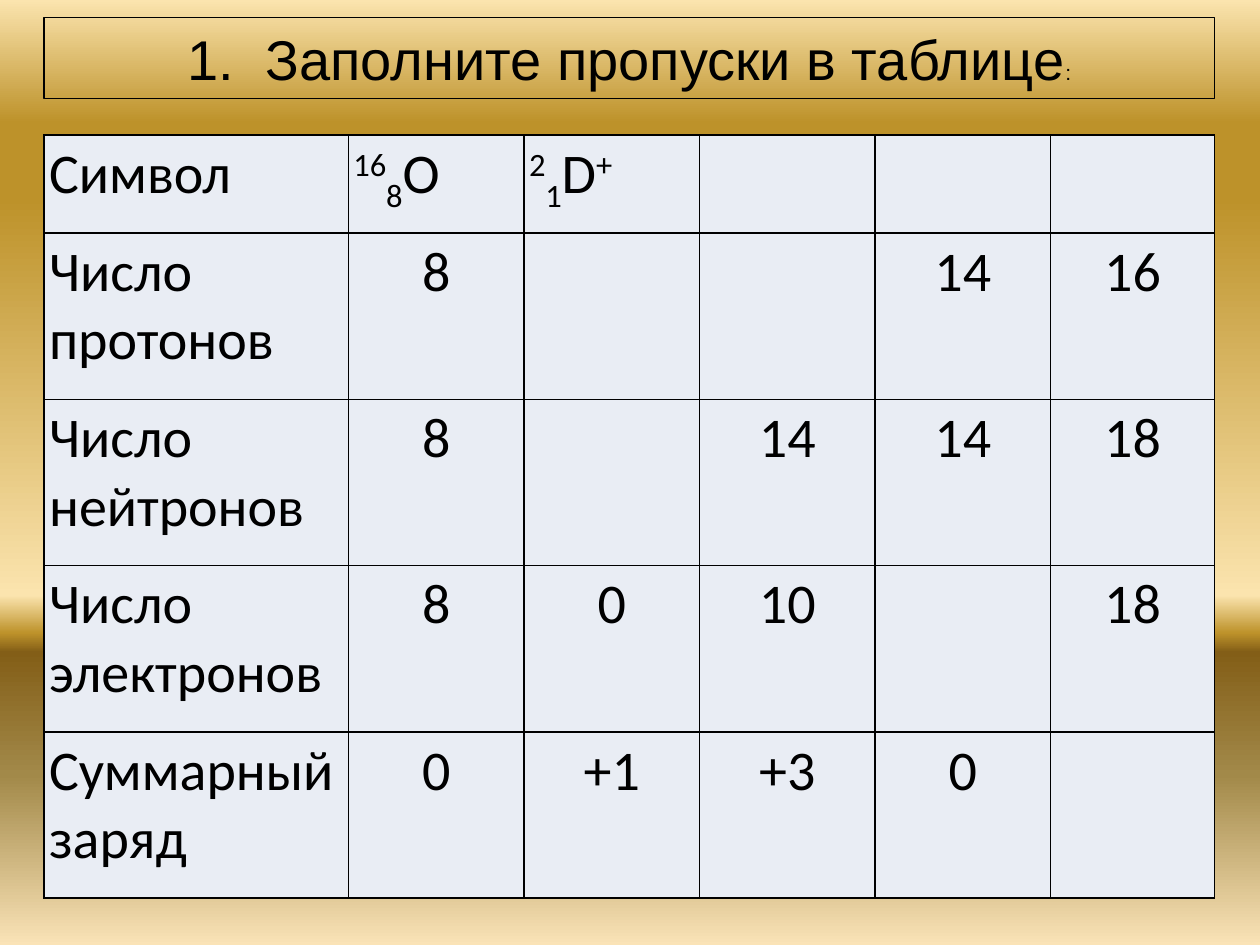
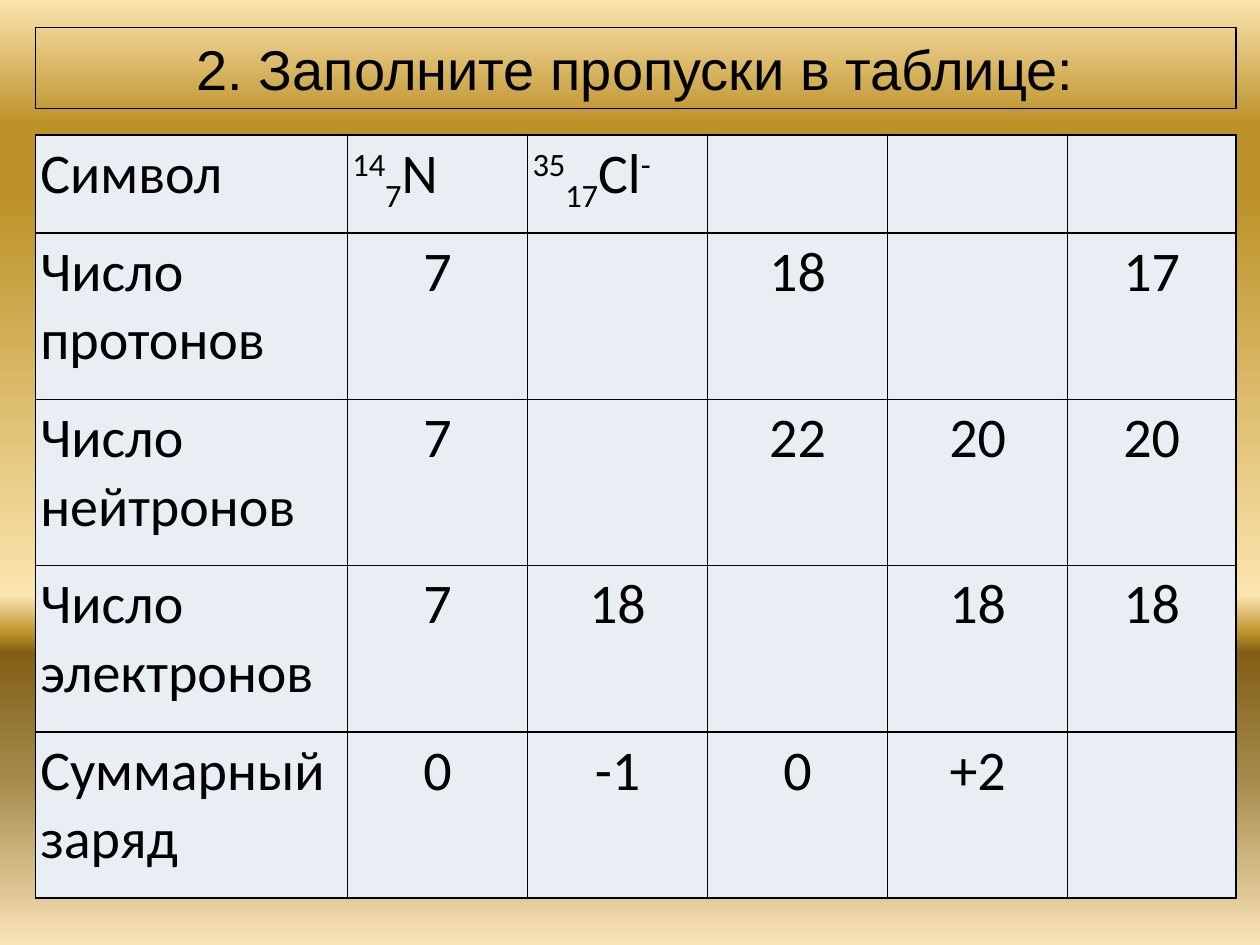
from dataclasses import dataclass
from itertools import product

from lxml.etree import SubElement
from pptx import Presentation
from pptx.dml.color import RGBColor
from pptx.enum.text import MSO_ANCHOR, MSO_AUTO_SIZE, PP_ALIGN
from pptx.oxml.ns import qn
from pptx.util import Emu, Inches, Pt

WIDTH, HEIGHT = Inches(10), Inches(7.5)
COLORS = {
    "ink": "000000",
    "cell": "E9EDF4",
    "cream": "FBE4AE",
    "gold": "BD922A",
    "brown": "835E17",
    "khaki": "A28949",
    "sand": "FAE3B7",
}
BACKDROP = [(0, "cream"), (13, "gold"), (21, "gold"), (63, "cream"),
            (67, "gold"), (69, "brown"), (82, "khaki"), (100, "sand")]

# Column shares are percent of the table width; the others are percent of the slide.
COLUMN_SHARES = [26, 15, 15, 15, 15, 14]
ROW_SHARES = [10.4] + [17.6] * 4
TABLE_TOP = 14.27
TITLE_HEIGHT = 8.53
ROW_LABELS = ["Символ", "Число протонов", "Число нейтронов",
              "Число электронов", "Суммарный заряд"]
CELL_FORMAT = {name: Inches(0.04) for name in
               ("margin_left", "margin_right", "margin_top", "margin_bottom")}
TITLE_FORMAT = {
    "word_wrap": True,
    "auto_size": MSO_AUTO_SIZE.NONE,
    "vertical_anchor": MSO_ANCHOR.MIDDLE,
}


@dataclass(frozen=True)
class Piece:
    text: str
    size: float = 32
    baseline: int = 0
    spacing: float = 0


@dataclass(frozen=True)
class Nuclide:
    mass: str
    protons: str
    symbol: str
    charge: str = ""

    def pieces(self) -> list[Piece]:
        parts = [Piece(self.mass, baseline=30), Piece(self.protons, baseline=-25),
                 Piece(self.symbol), Piece(self.charge, baseline=30)]
        return [part for part in parts if part.text]


@dataclass(frozen=True)
class Exercise:
    title: list[Piece]
    left: float
    width: float
    title_top: float
    nuclides: list[Nuclide]
    values: list[list[str]]


EXERCISES = [
    Exercise(
        [Piece("1."), Piece(" ", spacing=8.9),
         Piece("Заполните пропуски в таблице"), Piece(":", size=12)],
        3.5, 92.9, 1.87,
        [Nuclide("16", "8", "O"), Nuclide("2", "1", "D", "+")],
        [["8", "", "", "14", "16"],
         ["8", "", "14", "14", "18"],
         ["8", "0", "10", "", "18"],
         ["0", "+1", "+3", "0", ""]],
    ),
    Exercise(
        [Piece("2. Заполните пропуски в таблице:")],
        2.8, 95.3, 2.93,
        [Nuclide("14", "7", "N"), Nuclide("35", "17", "Cl", "-")],
        [["7", "", "18", "", "17"],
         ["7", "", "22", "20", "20"],
         ["7", "18", "", "18", "18"],
         ["0", "-1", "0", "+2", ""]],
    ),
]


def percent(share: float, whole: int) -> Emu:
    return Emu(round(whole * share / 100))


def color(name: str) -> RGBColor:
    return RGBColor.from_string(COLORS[name])


def apply(target, formats: dict) -> None:
    for name, value in formats.items():
        setattr(target, name, value)


def paint_backdrop(master) -> None:
    """Give the master a vertical gradient that every slide inherits."""
    master.background.fill.gradient()
    gradient = master.element.find(".//" + qn("a:gradFill"))
    for child in list(gradient):
        gradient.remove(child)
    stops = SubElement(gradient, qn("a:gsLst"))
    for position, name in BACKDROP:
        stop = SubElement(stops, qn("a:gs"), pos=str(position * 1000))
        SubElement(stop, qn("a:srgbClr"), val=COLORS[name])
    SubElement(gradient, qn("a:lin"), ang=str(90 * 60000), scaled="0")


def write(paragraph, pieces: list[Piece], font: str, align: PP_ALIGN) -> None:
    paragraph.alignment = align
    for piece in pieces:
        run = paragraph.add_run()
        run.text = piece.text
        apply(run.font, {"name": font, "size": Pt(piece.size), "bold": False})
        run.font.color.rgb = color("ink")
        properties = run._r.get_or_add_rPr()
        if piece.baseline:
            properties.set("baseline", str(piece.baseline * 1000))
        if piece.spacing:
            properties.set("spc", str(round(piece.spacing * 100)))


def add_borders(cell) -> None:
    properties = cell._tc.get_or_add_tcPr()
    for side in "LRTB":
        border = SubElement(properties, qn(f"a:ln{side}"), w=str(Pt(1)))
        fill = SubElement(border, qn("a:solidFill"))
        SubElement(fill, qn("a:srgbClr"), val=COLORS["ink"])


def place_title(slide, exercise: Exercise) -> None:
    title = slide.shapes.title
    apply(title, {
        "left": percent(exercise.left, WIDTH),
        "top": percent(exercise.title_top, HEIGHT),
        "width": percent(exercise.width, WIDTH),
        "height": percent(TITLE_HEIGHT, HEIGHT),
    })
    title.line.color.rgb = color("ink")
    title.line.width = Pt(0.75)
    apply(title.text_frame, TITLE_FORMAT)
    write(title.text_frame.paragraphs[0], exercise.title, "Arial", PP_ALIGN.CENTER)


def cell_pieces(exercise: Exercise, row: int, column: int) -> list[Piece]:
    if column == 0:
        return [Piece(ROW_LABELS[row])]
    if row == 0:
        known = column <= len(exercise.nuclides)
        return exercise.nuclides[column - 1].pieces() if known else []
    value = exercise.values[row - 1][column - 1]
    return [Piece(value)] if value else []


def add_particle_table(slide, exercise: Exercise) -> None:
    width = percent(exercise.width, WIDTH)
    table = slide.shapes.add_table(
        len(ROW_SHARES), len(COLUMN_SHARES),
        percent(exercise.left, WIDTH), percent(TABLE_TOP, HEIGHT),
        width, percent(sum(ROW_SHARES), HEIGHT)).table
    apply(table, {"first_row": False, "horz_banding": False})
    for column, share in zip(table.columns, COLUMN_SHARES):
        column.width = percent(share, width)
    for row, share in zip(table.rows, ROW_SHARES):
        row.height = percent(share, HEIGHT)
    for row, column in product(range(len(ROW_SHARES)), range(len(COLUMN_SHARES))):
        cell = table.cell(row, column)
        apply(cell, CELL_FORMAT)
        add_borders(cell)
        cell.fill.solid()
        cell.fill.fore_color.rgb = color("cell")
        align = PP_ALIGN.CENTER if row and column else PP_ALIGN.LEFT
        write(cell.text_frame.paragraphs[0],
              cell_pieces(exercise, row, column), "Calibri", align)


def main() -> None:
    deck = Presentation()
    apply(deck, {"slide_width": WIDTH, "slide_height": HEIGHT})
    paint_backdrop(deck.slide_master)
    title_only = deck.slide_layouts.get_by_name("Title Only")
    for exercise in EXERCISES:
        slide = deck.slides.add_slide(title_only)
        place_title(slide, exercise)
        add_particle_table(slide, exercise)
    deck.save("out.pptx")


if __name__ == "__main__":
    main()
